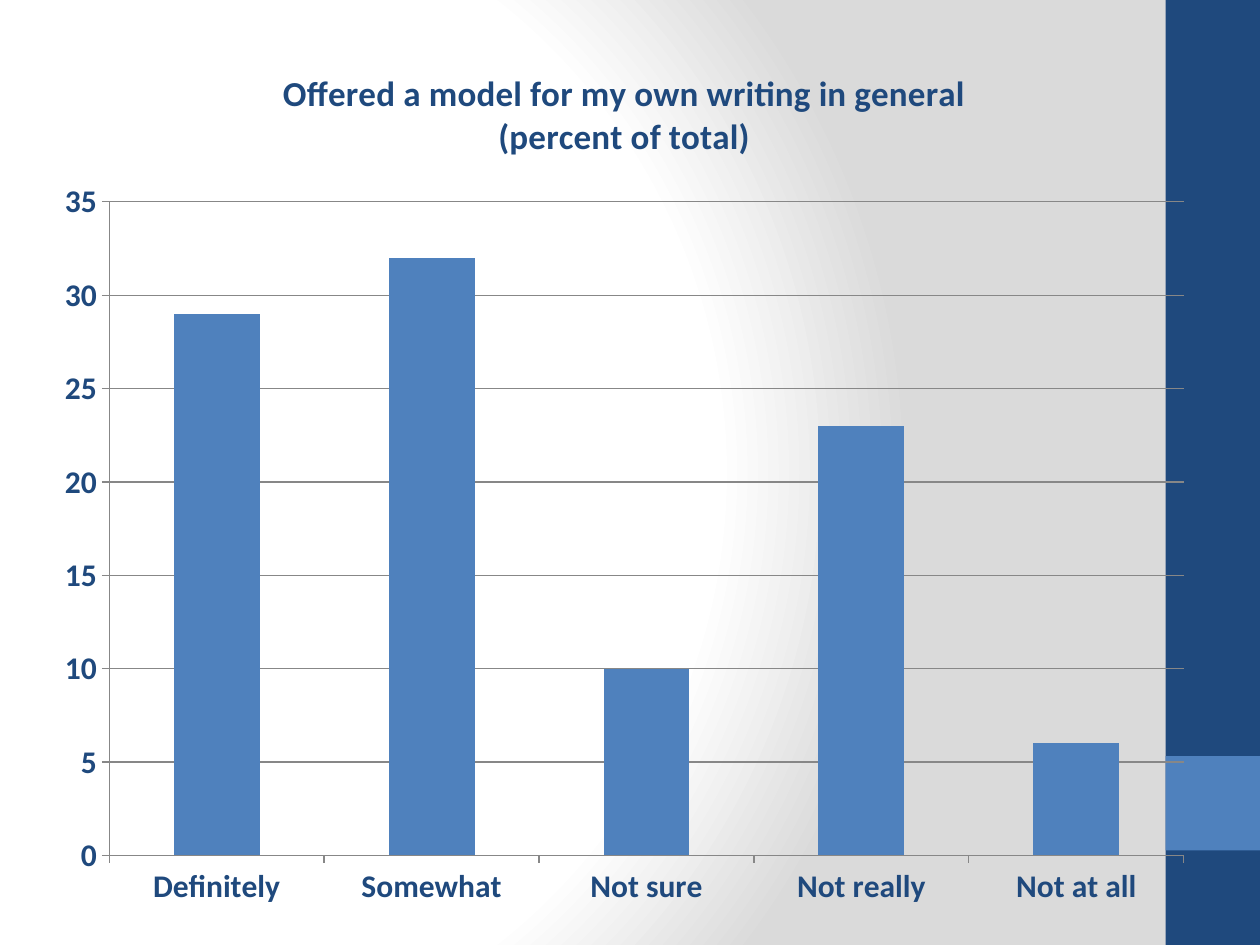
from pptx import Presentation
from pptx.chart.data import CategoryChartData
from pptx.dml.color import RGBColor
from pptx.enum.chart import XL_CHART_TYPE, XL_TICK_MARK
from pptx.enum.shapes import MSO_SHAPE
from pptx.oxml import parse_xml
from pptx.oxml.ns import nsdecls
from pptx.util import Inches, Pt

COLUMN = XL_CHART_TYPE.COLUMN_CLUSTERED
OUT = XL_TICK_MARK.OUTSIDE
NONE = XL_TICK_MARK.NONE
RECT = MSO_SHAPE.RECTANGLE
FONT = "Calibri"
COLORS = {"navy": "1F497D", "blue": "4F81BD", "white": "FFFFFF",
          "gray": "DADADA", "line": "878787"}


def rgb(name):
    return RGBColor.from_string(COLORS[name])


def style(font, size):
    font.name = FONT
    font.size = Pt(size)
    font.bold = True
    font.color.rgb = rgb("navy")


prs = Presentation()
prs.slide_width = Inches(10)
prs.slide_height = Inches(7.5)
slide = prs.slides.add_slide(prs.slide_layouts[6])

stops = "".join(
    f'<a:gs pos="{pos * 1000}"><a:srgbClr val="{COLORS[name]}"/></a:gs>'
    for pos, name in [(0, "white"), (75, "white"), (100, "gray")])
back = parse_xml(
    f'<p:bg {nsdecls("p", "a")}><p:bgPr><a:gradFill rotWithShape="1">'
    f'<a:gsLst>{stops}</a:gsLst><a:path path="circle">'
    '<a:fillToRect l="20000" t="50000" r="100000" b="50000"/></a:path>'
    '</a:gradFill><a:effectLst/></p:bgPr></p:bg>')
slide.element.cSld.insert(0, back)

for top, height, name in [(0, 7.5, "navy"), (6, 0.75, "blue")]:
    band = slide.shapes.add_shape(
        RECT, Inches(9.25), Inches(top), Inches(0.75), Inches(height))
    band.shadow.inherit = False
    band.fill.solid()
    band.fill.fore_color.rgb = rgb(name)
    band.line.fill.background()

data = CategoryChartData()
data.categories = ["Definitely", "Somewhat", "Not sure", "Not really", "Not at all"]
data.add_series("Series 1", [29, 32, 10, 23, 6])
chart = slide.shapes.add_chart(
    COLUMN, Inches(0.33), Inches(0.33), Inches(9.25), Inches(7), data).chart
chart.has_legend = False
chart.font.name = FONT
chart.font.size = Pt(18)

chart.has_title = True
frame = chart.chart_title.text_frame
chart.chart_title.include_in_layout = False
lines = ["Offered a model for my own writing in general", "(percent of total)"]
for i, line in enumerate(lines):
    para = frame.add_paragraph() if i else frame.paragraphs[0]
    run = para.add_run()
    run.text = line
    style(run.font, 20)

values = chart.value_axis
values.minimum_scale = 0
values.maximum_scale = 35
values.major_unit = 5
values.has_major_gridlines = True
values.major_gridlines.format.line.color.rgb = rgb("line")
values.major_gridlines.format.line.width = Pt(0.75)
for axis in (chart.category_axis, values):
    axis.major_tick_mark = OUT
    axis.minor_tick_mark = NONE
    axis.format.line.color.rgb = rgb("line")
    axis.format.line.width = Pt(0.75)
    style(axis.tick_labels.font, 18)

plot = chart.plots[0]
plot.gap_width = 150
plot.vary_by_categories = False
bars = plot.series[0]
bars.format.fill.solid()
bars.format.fill.fore_color.rgb = rgb("blue")

prs.save("out.pptx")
